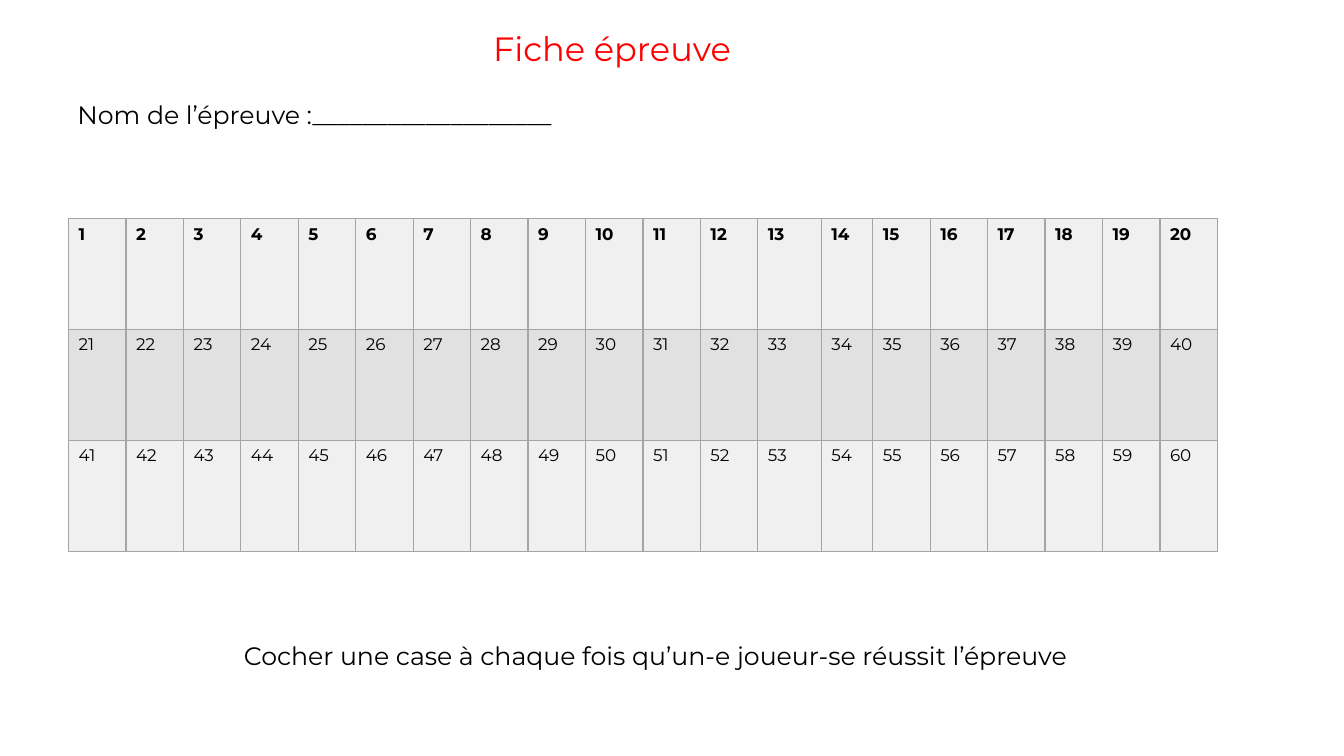
"""Build a score sheet slide with a numbered grid of sixty boxes to tick."""
from lxml.etree import SubElement
from pptx import Presentation
from pptx.dml.color import RGBColor
from pptx.enum.text import MSO_ANCHOR as Anchor, MSO_AUTO_SIZE as AutoSize, PP_ALIGN as Align
from pptx.oxml.ns import qn
from pptx.util import Inches, Pt

ROWS, COLUMNS = 3, 20
ROW_FILLS = ["F0F0F0", "E1E1E1"]
BORDER = "A5A5A5"


def color(value):
    return RGBColor.from_string(value)


def write(frame, text, size=18, fill="000000", bold=False):
    frame.vertical_anchor = Anchor.TOP
    paragraph = frame.paragraphs[0]
    paragraph.alignment = Align.LEFT
    run = paragraph.add_run()
    run.text = text
    run.font.name = "Montserrat"
    run.font.size = Pt(size)
    run.font.bold = bold
    run.font.color.rgb = color(fill)


presentation = Presentation()
presentation.slide_width = Inches(13.33)
presentation.slide_height = Inches(7.5)
slide = presentation.slides.add_slide(presentation.slide_layouts[5])

title = slide.shapes.title
title.left, title.top = Inches(4.79), Inches(0.23)
title.width, title.height = Inches(2.9), Inches(0.5)
title.text_frame.word_wrap = False
title.text_frame.auto_size = AutoSize.SHAPE_TO_FIT_TEXT
write(title.text_frame, "Fiche épreuve", size=24, fill="FF0000")

table = slide.shapes.add_table(
    ROWS, COLUMNS, Inches(0.68), Inches(2.17), Inches(11.4), Inches(3.3)
).table
for column in table.columns:
    column.width = Inches(0.57)
table.columns[12].width = Inches(0.63)
table.columns[13].width = Inches(0.51)

for row_index, row in enumerate(table.rows):
    row.height = Inches(1.1)
    for column_index, cell in enumerate(row.cells):
        number = row_index * COLUMNS + column_index + 1
        write(cell.text_frame, str(number), size=12, bold=row_index == 0)
        properties = cell._tc.get_or_add_tcPr()
        for side in ("a:lnL", "a:lnR", "a:lnT", "a:lnB"):
            line = SubElement(properties, qn(side), w=str(Pt(1)))
            solid = SubElement(line, qn("a:solidFill"))
            SubElement(solid, qn("a:srgbClr"), val=BORDER)
        cell.fill.solid()
        cell.fill.fore_color.rgb = color(ROW_FILLS[row_index % 2])

for text, left, top, width in [
    ("Nom de l’épreuve :___________________", 0.67, 0.94, 5.84),
    ("Cocher une case à chaque fois qu’un-e joueur-se réussit l’épreuve", 2.32, 6.3, 9.34),
]:
    box = slide.shapes.add_textbox(Inches(left), Inches(top), Inches(width), Inches(0.4))
    box.text_frame.word_wrap = False
    box.text_frame.auto_size = AutoSize.SHAPE_TO_FIT_TEXT
    write(box.text_frame, text)

presentation.save("out.pptx")
